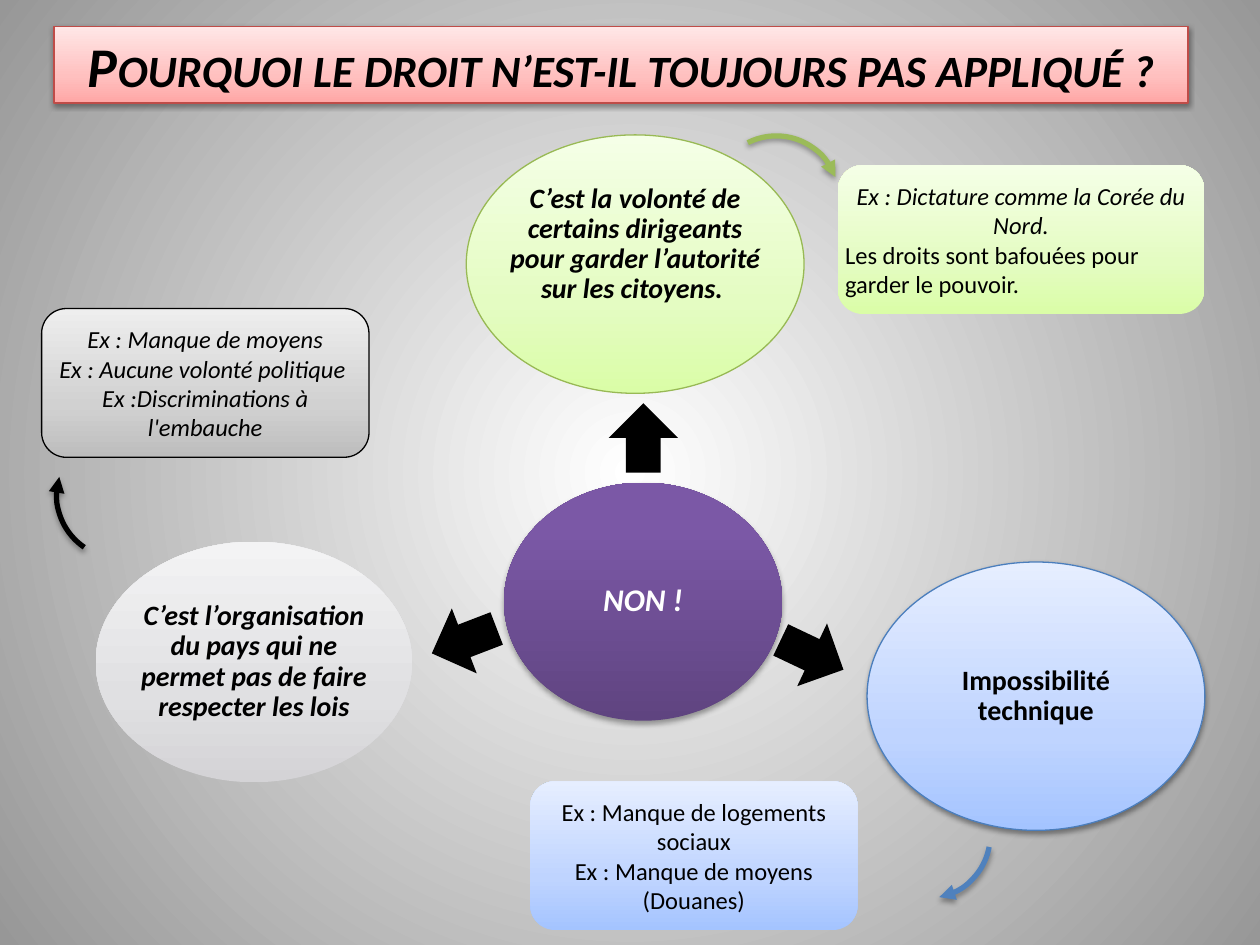
import copy

import lxml.etree
import pptx
import pptx.dml.color
import pptx.enum.shapes
import pptx.enum.text
import pptx.oxml.ns
import pptx.util

Cm = pptx.util.Cm
RGB = pptx.dml.color.RGBColor
SHAPE = pptx.enum.shapes.MSO_SHAPE
ALIGN = pptx.enum.text.PP_ALIGN
qn = pptx.oxml.ns.qn

BLACK = RGB(0x00, 0x00, 0x00)
WHITE = RGB(0xFF, 0xFF, 0xFF)
BACKDROP_EDGE = RGB(0x97, 0x97, 0x97)
RED_LINE = RGB(0xBF, 0x4C, 0x48)
GREEN_LINE = RGB(0x98, 0xB9, 0x55)
GREEN_ARC = RGB(0x9B, 0xBB, 0x59)
BLUE_LINE = RGB(0x4B, 0x7E, 0xBC)
BLUE_ARC = RGB(0x4F, 0x81, 0xBD)


def ramp(middle_position, *colors):
    """Pair three colours, bottom to top, with their gradient positions."""
    return list(zip((0, middle_position, 1), colors))


RED = ramp(0.35, RGB(0xFF, 0xA6, 0xA5), RGB(0xFF, 0xC0, 0xBF), RGB(0xFF, 0xE7, 0xE7))
GREEN = ramp(0.35, RGB(0xDA, 0xFD, 0xA7), RGB(0xE4, 0xFC, 0xC2), RGB(0xF5, 0xFF, 0xE7))
BLUE = ramp(0.35, RGB(0xA4, 0xC4, 0xFF), RGB(0xBF, 0xD4, 0xFF), RGB(0xE6, 0xEE, 0xFF))
GREY = ramp(0.35, RGB(0xBD, 0xBD, 0xBD), RGB(0xD1, 0xD1, 0xD1), RGB(0xEE, 0xEE, 0xEE))
SILVER = ramp(0.35, RGB(0xD4, 0xD3, 0xD6), RGB(0xE0, 0xE0, 0xE2), RGB(0xF3, 0xF3, 0xF4))
PURPLE = ramp(0.8, RGB(0x5F, 0x44, 0x80), RGB(0x7B, 0x58, 0xA6), RGB(0x7C, 0x57, 0xA8))


def add_text(shape, text, size=14, color=BLACK, bold=False, italic=False,
             align=ALIGN.CENTER, spacing=1.0, small_caps=False):
    """Append one paragraph, reusing the first one while it is empty."""
    frame = shape.text_frame
    paragraph = frame.add_paragraph() if frame.text else frame.paragraphs[0]
    paragraph.alignment = align
    paragraph.line_spacing = spacing
    run = paragraph.add_run()
    run.text = text
    run.font.name = "Calibri"
    run.font.size = pptx.util.Pt(size)
    run.font.color.rgb = color
    run.font.bold = bold
    run.font.italic = italic
    if small_caps:
        run.font._element.set("cap", "small")


def set_gradient(fill, element, stops):
    fill.gradient()
    stop_list = next(element.iter(qn("a:gsLst")))
    while len(stop_list) < len(stops):
        stop_list.append(copy.deepcopy(stop_list[0]))
    for stop, (position, color) in zip(fill.gradient_stops, stops):
        stop.position = position
        stop.color.rgb = color


class Diagram:
    def __init__(self, slide):
        self.slide = slide

    def background(self, center, edge):
        fill = self.slide.background.fill
        element = self.slide._element
        set_gradient(fill, element, [(0, center), (1, edge)])
        linear = next(element.iter(qn("a:lin")))
        radial = lxml.etree.Element(qn("a:path"))
        radial.set("path", "circle")
        lxml.etree.SubElement(radial, qn("a:fillToRect"),
                              dict.fromkeys("ltrb", "50000"))
        linear.getparent().replace(linear, radial)

    def shadow(self, shape, opacity, distance):
        effects = shape._element.spPr.find(qn("a:effectLst"))
        outer = lxml.etree.SubElement(effects, qn("a:outerShdw"), {
            "blurRad": str(pptx.util.Pt(3.1)), "dist": str(pptx.util.Pt(distance)),
            "dir": "5400000", "rotWithShape": "0"})
        color = lxml.etree.SubElement(outer, qn("a:srgbClr"), val=str(BLACK))
        lxml.etree.SubElement(color, qn("a:alpha"), val=str(opacity * 1000))

    def style(self, shape, stops, line=None, insets=(0, 0, 0, 0)):
        """Apply gradient, outline and text margins (left, top, right, bottom)."""
        shape.shadow.inherit = False
        set_gradient(shape.fill, shape._element, stops)
        shape.fill.gradient_angle = 90
        if line is None:
            shape.line.fill.background()
        else:
            shape.line.color.rgb = line
            shape.line.width = pptx.util.Pt(0.75)
        frame = shape.text_frame
        frame.word_wrap = True
        frame.vertical_anchor = pptx.enum.text.MSO_ANCHOR.MIDDLE
        (frame.margin_left, frame.margin_top,
         frame.margin_right, frame.margin_bottom) = map(Cm, insets)

    def preset(self, kind, left, top, width, height):
        return self.slide.shapes.add_shape(
            kind, Cm(left), Cm(top), Cm(width), Cm(height))

    def title(self, text):
        shape = self.preset(SHAPE.RECTANGLE, 1.09, 0.53, 22.86, 1.55)
        self.style(shape, RED, RED_LINE, (0.25, 0.13, 0.25, 0.13))
        self.shadow(shape, 38, 1.6)
        add_text(shape, text, size=32, bold=True, italic=True, small_caps=True)

    def note(self, left, top, width, stops, line=None):
        shape = self.preset(SHAPE.ROUNDED_RECTANGLE, left, top, width, 3)
        self.style(shape, stops, line)
        return shape

    def bubble(self, left, top, width, height, stops, text, insets, line=None, **text_format):
        """Draw an ellipse whose text area is its whole bounding box."""
        x_radius, y_radius = Cm(width / 2), Cm(height / 2)
        x_center, y_center = Cm(left) + x_radius, Cm(top) + y_radius
        start = (x_center - x_radius, y_center)
        builder = self.slide.shapes.build_freeform(*start)
        builder.add_line_segments([(x_center, y_center - y_radius),
                                   (x_center + x_radius, y_center),
                                   (x_center, y_center + y_radius), start], close=True)
        shape = builder.convert_to_shape()
        # Each straight side of the diamond becomes a quarter of the ellipse.
        sides = list(shape._element.iter(qn("a:lnTo")))
        for side, start_angle in zip(sides, (180, 270, 0, 90)):
            quarter = lxml.etree.Element(qn("a:arcTo"), {
                "wR": str(x_radius), "hR": str(y_radius),
                "stAng": str(start_angle * 60000), "swAng": "5400000"})
            side.getparent().replace(side, quarter)
        self.style(shape, stops, line, insets)
        add_text(shape, text, spacing=0.9, bold=True, **text_format)
        return shape

    def block_arrow(self, left, top, rotation=0):
        shape = self.preset(SHAPE.UP_ARROW, left, top, 1.4, 1.4)
        shape.shadow.inherit = False
        shape.rotation = rotation
        shape.fill.solid()
        shape.fill.fore_color.rgb = BLACK
        shape.line.fill.background()

    def curved_arrow(self, left, top, rotation, start, end, color):
        """Draw an arc between two angles in degrees, with a head at its end."""
        shape = self.preset(SHAPE.ARC, left, top, 2.54, 2.54)
        shape.shadow.inherit = False
        shape.rotation = rotation
        for index, degrees in enumerate((start, end)):
            shape.adjustments[index] = degrees * 60000 / 100000
        shape.fill.background()
        shape.line.color.rgb = color
        shape.line.width = pptx.util.Pt(3)
        lxml.etree.SubElement(shape.line._get_or_add_ln(), qn("a:tailEnd"), type="triangle")
        self.shadow(shape, 35, 1.8)


def main():
    presentation = pptx.Presentation()
    presentation.slide_width = Cm(25.4)
    presentation.slide_height = Cm(19.05)
    diagram = Diagram(presentation.slides.add_slide(presentation.slide_layouts[6]))
    diagram.background(WHITE, BACKDROP_EDGE)

    housing = diagram.note(10.69, 15.75, 6.6, BLUE)
    add_text(housing, "Ex : Manque de logements sociaux")
    add_text(housing, "Ex : Manque de moyens (Douanes)")
    diagram.title("Pourquoi le droit n’est-il toujours pas appliqué ?")
    resources = diagram.note(0.84, 6.22, 6.6, GREY, BLACK)
    for text in ("Ex : Manque de moyens", "Ex : Aucune volonté politique ",
                 "Ex :Discriminations à l'embauche"):
        add_text(resources, text, italic=True)

    answer = diagram.bubble(10.16, 9.73, 5.61, 4.8, PURPLE, "NON !",
                            (0.89, 0.76, 0.89, 0.76), size=18, color=WHITE, italic=True)
    diagram.shadow(answer, 35, 1.8)
    diagram.bubble(9.4, 2.72, 6.81, 5.21, GREEN,
                   "C’est la volonté de certains dirigeants pour garder l’autorité "
                   "sur les citoyens. ",
                   (0.76, 0.61, 0.76, 1.4), GREEN_LINE, size=16, italic=True)
    technical = diagram.bubble(17.48, 11.33, 6.81, 5.41, BLUE, "Impossibilité technique",
                               (0.79, 0.76, 0.79, 0.76), BLUE_LINE, size=16)
    diagram.shadow(technical, 38, 1.6)
    diagram.bubble(1.93, 10.92, 6.38, 4.85, SILVER,
                   "C’est l’organisation du pays qui ne permet pas de faire "
                   "respecter les lois",
                   (0.81, 0.76, 0.81, 0.76), size=16, italic=True)

    dictatorship = diagram.note(16.89, 3.33, 7.39, GREEN)
    add_text(dictatorship, "Ex : Dictature comme la Corée du Nord.", italic=True)
    add_text(dictatorship, "Les droits sont bafouées pour garder le pouvoir.",
             align=ALIGN.LEFT)

    diagram.curved_arrow(1.14, 8.71, 192.4, 291.76, 4.4, BLACK)
    diagram.curved_arrow(14.38, 2.74, 335.3, 267.75, 4.4, GREEN_ARC)
    diagram.block_arrow(12.27, 8.13)
    diagram.block_arrow(15.67, 12.5, 115.4)
    diagram.block_arrow(8.66, 12.22, 249)
    diagram.curved_arrow(17.42, 15.57, 133.6, 236.97, 305.34, BLUE_ARC)
    presentation.save("out.pptx")


if __name__ == "__main__":
    main()
